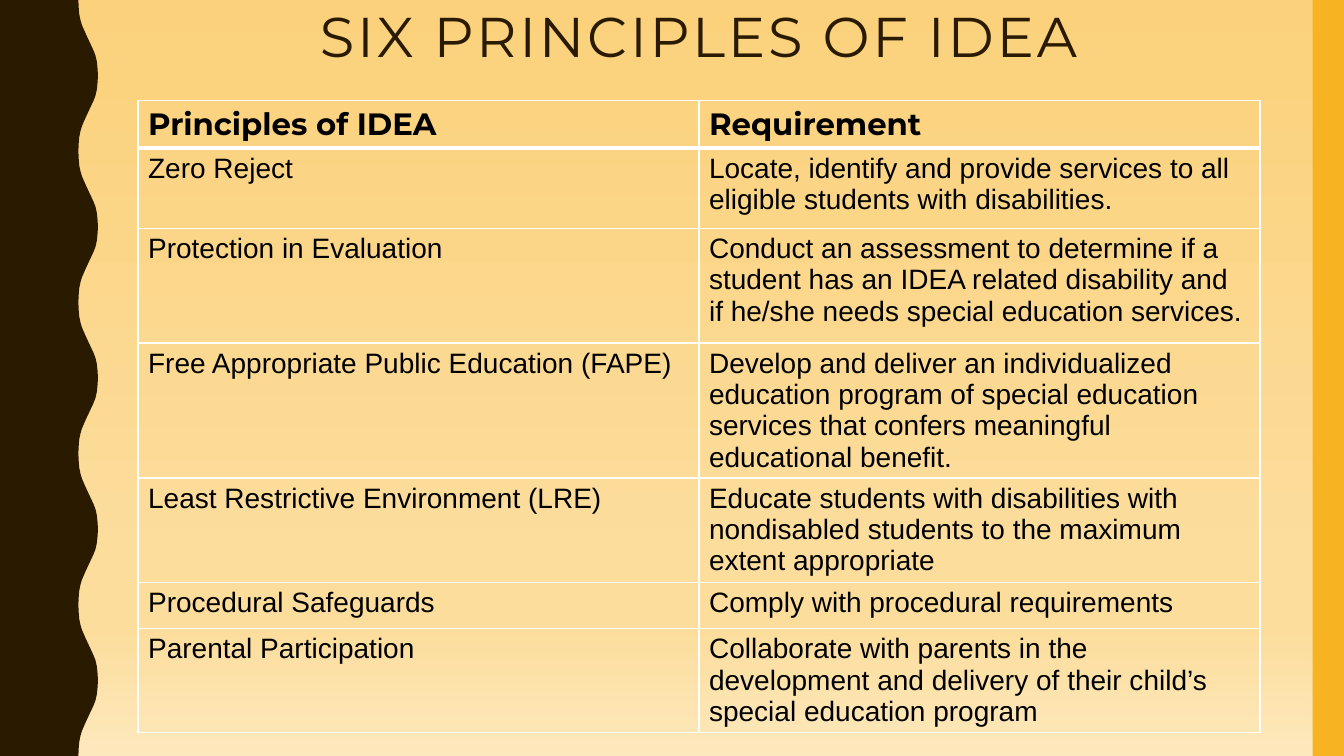
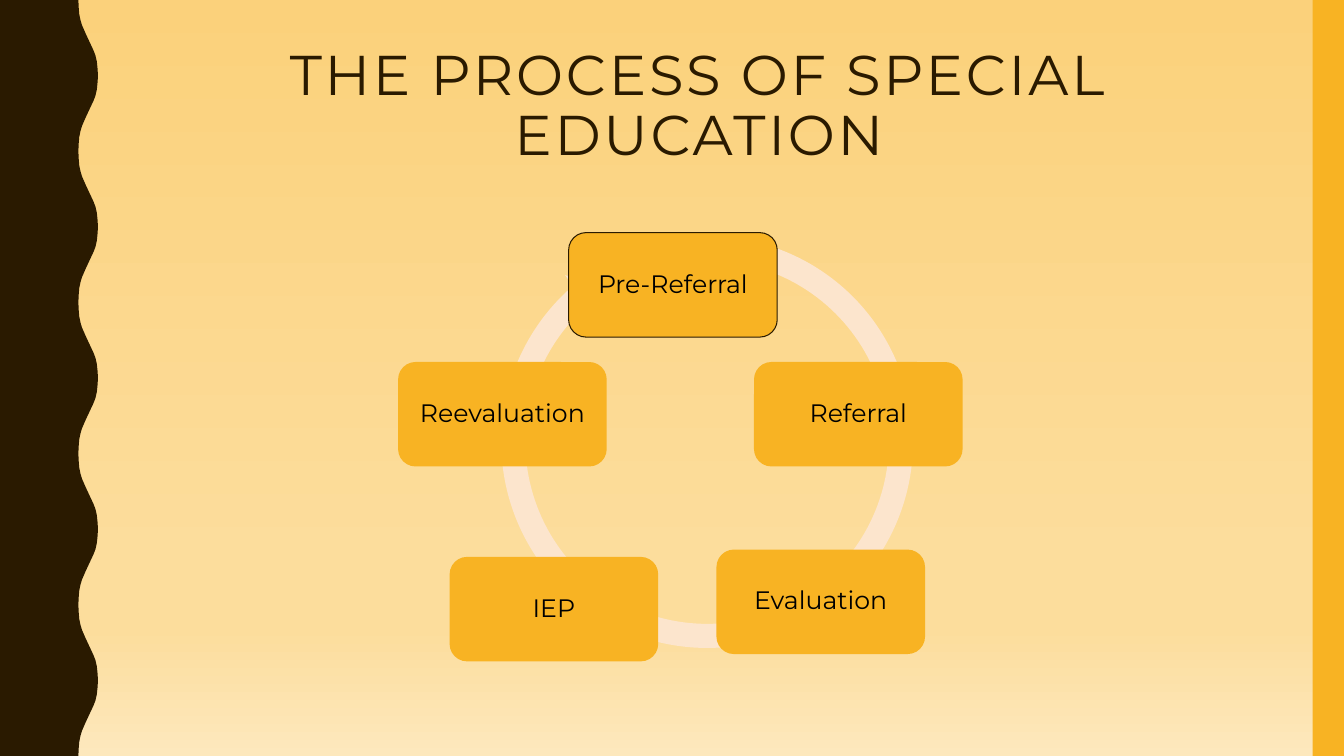
import dataclasses

import lxml.etree
import pptx
import pptx.dml.color
import pptx.enum.dml
import pptx.enum.shapes
import pptx.enum.text
import pptx.oxml.ns
import pptx.util

Pt = pptx.util.Pt
qn = pptx.oxml.ns.qn
ALIGN = pptx.enum.text.PP_ALIGN
ANCHOR = pptx.enum.text.MSO_ANCHOR
SHAPE = pptx.enum.shapes.MSO_SHAPE


@dataclasses.dataclass(frozen=True)
class Theme:
    dark: str = "2A1A00"
    accent: str = "F8B323"
    ring: str = "FCE5CD"
    black: str = "000000"
    white: str = "FFFFFF"
    backdrop: tuple = ((0, "FBD17B"), (74, "FCDD9C"), (83, "FCDD9C"), (100, "FDE8BD"))
    font: str = "Montserrat"
    cell_font: str = "Arial"
    title_size: int = 40
    header_size: int = 22
    cell_size: int = 20
    box_size: int = 18


THEME = Theme()
WIDTH, HEIGHT = 960, 540
CONTENT_LEFT, CONTENT_WIDTH = 98.6, 801.4
WAVE_PERIOD = 108
HALF_WAVE = [(56, 0), (56.2, 5), (56.6, 10), (57.5, 14.4), (58.6, 18), (61.2, 24),
             (64, 30), (66.8, 36), (68.2, 39.6), (69.2, 44), (69.7, 49), (70, 54)]


def rgb(color):
    return pptx.dml.color.RGBColor.from_string(color)


def put_text(tf, text, *, size, font=THEME.font, color=THEME.black, bold=False,
             align=ALIGN.LEFT, anchor=None, spacing=None, tracking=None):
    tf.word_wrap = True
    if anchor is not None:
        tf.vertical_anchor = anchor
    p = tf.paragraphs[0]
    p.alignment = align
    if spacing:
        p.line_spacing = spacing
    r = p.add_run()
    r.text = text
    r.font.name = font
    r.font.size = Pt(size)
    r.font.bold = bold
    r.font.color.rgb = rgb(color)
    if tracking:
        r.font._element.set("spc", str(tracking * 100))


class Deck:
    def __init__(self, theme):
        self.theme = theme
        self.prs = pptx.Presentation()
        self.prs.slide_width = Pt(WIDTH)
        self.prs.slide_height = Pt(HEIGHT)
        self.slide = None
        self.paint_background()

    def paint_background(self):
        master = self.prs.slide_master
        fill = master.background.fill
        fill.gradient()
        fill.gradient_angle = 270
        stops = next(master.element.iter(qn("a:gsLst")))
        for gs in list(stops):
            stops.remove(gs)
        for percent, color in self.theme.backdrop:
            gs = lxml.etree.SubElement(stops, qn("a:gs"), pos=str(percent * 1000))
            lxml.etree.SubElement(gs, qn("a:srgbClr"), val=color)

    def new_slide(self, title, top):
        self.slide = self.prs.slides.add_slide(self.prs.slide_layouts[5])
        self.wave()
        self.shape(SHAPE.RECTANGLE, 937.6, 0, 22.4, HEIGHT, self.theme.accent)
        sp = self.slide.shapes.title
        sp.left, sp.top = Pt(CONTENT_LEFT), Pt(top)
        sp.width, sp.height = Pt(CONTENT_WIDTH), Pt(118)
        sp.text_frame.auto_size = pptx.enum.text.MSO_AUTO_SIZE.NONE
        put_text(sp.text_frame, title, size=self.theme.title_size, color=self.theme.dark,
                 align=ALIGN.CENTER, anchor=ANCHOR.TOP, spacing=0.9, tracking=2)

    def style(self, sp, fill, line=None):
        sp.shadow.inherit = False
        sp.fill.solid()
        sp.fill.fore_color.rgb = rgb(fill)
        if line:
            sp.line.color.rgb = rgb(line)
            sp.line.width = Pt(0.75)
        else:
            sp.line.fill.background()
        return sp

    def shape(self, kind, left, top, width, height, fill, line=None):
        sp = self.slide.shapes.add_shape(kind, Pt(left), Pt(top), Pt(width), Pt(height))
        return self.style(sp, fill, line)

    def wave(self):
        period = HALF_WAVE + [(x, WAVE_PERIOD - y) for x, y in reversed(HALF_WAVE[:-1])]
        edge = [(Pt(x), Pt(start + y))
                for start in range(0, HEIGHT, WAVE_PERIOD) for x, y in period]
        builder = self.slide.shapes.build_freeform(0, 0)
        builder.add_line_segments(edge + [(0, Pt(HEIGHT))], close=True)
        self.style(builder.convert_to_shape(), self.theme.dark)

    def ring(self, left, top, size):
        sp = self.shape(SHAPE.CIRCULAR_ARROW, left, top, size, size, self.theme.ring)
        for i, value in enumerate((0.055, 3.31, 137.39, 174.08, 0.058)):
            sp.adjustments[i] = value

    def box(self, text, left, top, line=None):
        sp = self.shape(SHAPE.ROUNDED_RECTANGLE, left, top, 149, 74.6,
                        self.theme.accent, line)
        put_text(sp.text_frame, text, size=self.theme.box_size,
                 align=ALIGN.CENTER, anchor=ANCHOR.MIDDLE, spacing=0.9)

    def border(self, cell, **widths):
        tcPr = cell._tc.get_or_add_tcPr()
        for side in "LRTB":
            width = Pt(widths.get(side, 1))
            ln = lxml.etree.SubElement(tcPr, qn("a:ln" + side), w=str(width))
            fill = lxml.etree.SubElement(ln, qn("a:solidFill"))
            lxml.etree.SubElement(fill, qn("a:srgbClr"), val=self.theme.white)

    def table(self, rows, heights, top):
        frame = self.slide.shapes.add_table(len(rows), len(rows[0]), Pt(CONTENT_LEFT), Pt(top),
                                            Pt(CONTENT_WIDTH), Pt(sum(heights)))
        table = frame.table
        table.horz_banding = False
        header = dict(size=self.theme.header_size, bold=True)
        body = dict(size=self.theme.cell_size, font=self.theme.cell_font)
        for i, (row, height) in enumerate(zip(rows, heights)):
            table.rows[i].height = Pt(height)
            for j, text in enumerate(row):
                cell = table.cell(i, j)
                self.border(cell, T=3 if i == 1 else 1, B=3 if i == 0 else 1)
                cell.fill.background()
                put_text(cell.text_frame, text, **(body if i else header))


PRINCIPLES = [
    ("Principles of IDEA", "Requirement"),
    ("Zero Reject",
     "Locate, identify and provide services to all eligible students with disabilities."),
    ("Protection in Evaluation",
     "Conduct an assessment to determine if a student has an IDEA related disability "
     "and if he/she needs special education services."),
    ("Free Appropriate Public Education (FAPE)",
     "Develop and deliver an individualized education program of special education "
     "services that confers meaningful educational benefit."),
    ("Least Restrictive Environment (LRE)",
     "Educate students with disabilities with nondisabled students to the maximum "
     "extent appropriate"),
    ("Procedural Safeguards", "Comply with procedural requirements"),
    ("Parental Participation",
     "Collaborate with parents in the development and delivery of their child’s "
     "special education program"),
]
ROW_HEIGHTS = [33.6, 57.4, 82, 96.4, 74.4, 33.2, 74.4]

STEPS = [
    ("Pre-Referral", 406.2, 166.2, THEME.dark),
    ("Referral", 538.6, 258.6, None),
    ("Evaluation", 511.8, 392.6, None),
    ("IEP", 321.2, 397.8, None),
    ("Reevaluation", 284.4, 258.6, None),
]


def main():
    deck = Deck(THEME)

    deck.new_slide("SIX PRINCIPLES OF IDEA", top=3)
    deck.table(PRINCIPLES, ROW_HEIGHTS, top=71.6)

    deck.new_slide("THE PROCESS OF SPECIAL EDUCATION", top=30)
    deck.ring(348.5, 159.2, 313.2)
    for text, left, top, line in STEPS:
        deck.box(text, left, top, line)

    deck.prs.save("out.pptx")


if __name__ == "__main__":
    main()
